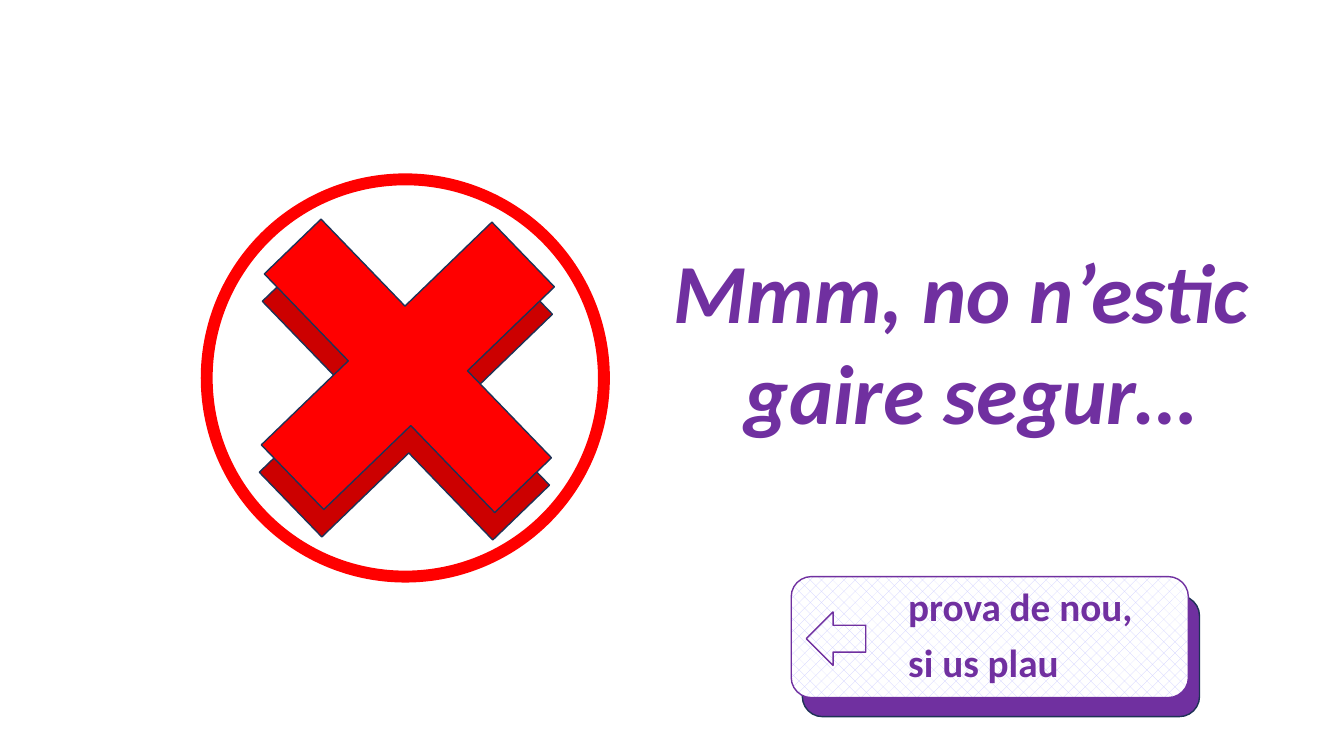
from dataclasses import dataclass

from pptx import Presentation
from pptx import util as u
from pptx.dml.color import RGBColor
from pptx.enum import dml, shapes, text


@dataclass(frozen=True)
class Theme:
    purple: RGBColor = RGBColor(0x70, 0x30, 0xA0)
    lavender: RGBColor = RGBColor(0xCC, 0xCC, 0xFF)
    white: RGBColor = RGBColor(0xFF, 0xFF, 0xFF)
    red: RGBColor = RGBColor(0xFF, 0x00, 0x00)
    dark_red: RGBColor = RGBColor(0xCC, 0x00, 0x00)
    navy: RGBColor = RGBColor(0x1E, 0x32, 0x56)
    font: str = "Calibri"
    message_size: int = 60
    button_size: int = 28


THEME = Theme()
KIND = shapes.MSO_SHAPE


def apply(target, formats):
    for name, value in formats.items():
        setattr(target, name, value)


def add_figure(page, kind, place, fill=None, line=THEME.navy, width=1):
    """Add a preset shape; place is left, top, width, height in centimetres."""
    shape = page.shapes.add_shape(kind, *map(u.Cm, place))
    shape.shadow.inherit = False
    if fill is None:
        shape.fill.background()
    else:
        shape.fill.solid()
        shape.fill.fore_color.rgb = fill
    shape.line.color.rgb = line
    shape.line.width = u.Pt(width)
    return shape


def add_cross(page, left, top, fill):
    cross = add_figure(page, KIND.CROSS, (left, top, 8.36, 8.08), fill)
    cross.adjustments[0] = 0.377
    cross.rotation = 46


def hatch(shape):
    shape.fill.patterned()
    shape.fill.pattern = dml.MSO_PATTERN.PERCENT_25
    shape.fill.fore_color.rgb = THEME.lavender
    shape.fill.back_color.rgb = THEME.white


def write_lines(frame, lines, size, align, italic=False, spacing=1.0, gap=0):
    """Write one paragraph per line, with gap points between them."""
    for index, line in enumerate(lines):
        para = frame.paragraphs[0] if index == 0 else frame.add_paragraph()
        apply(para, {"alignment": align, "line_spacing": spacing,
                     "space_before": u.Pt(gap if index else 0)})
        span = para.add_run()
        span.text = line
        apply(span.font, {"name": THEME.font, "size": u.Pt(size),
                          "bold": True, "italic": italic})
        span.font.color.rgb = THEME.purple


def add_message(page):
    box = page.shapes.add_textbox(*map(u.Cm, (16.64, 5.92, 15.16, 5.38)))
    box.text_frame.word_wrap = False
    write_lines(box.text_frame, ["Mmm, no n’estic", " gaire segur…"],
                THEME.message_size, text.PP_ALIGN.CENTER, italic=True)


def add_wrong_mark(page):
    add_figure(page, KIND.FLOWCHART_CONNECTOR, (5.21, 4.52, 10.01, 10.01),
               line=THEME.red, width=8.5)
    add_cross(page, 6.05, 5.87, THEME.dark_red)
    add_cross(page, 6.1, 5.18, THEME.red)


def add_retry_button(page):
    size = (10.01, 3.05)
    add_figure(page, KIND.ROUNDED_RECTANGLE, (20.22, 15.01, *size), THEME.purple)
    face = add_figure(page, KIND.ROUNDED_RECTANGLE, (19.94, 14.53, *size),
                      line=THEME.purple)
    hatch(face)
    apply(face.text_frame, {"word_wrap": True, "margin_left": u.Cm(2.8),
                            "vertical_anchor": text.MSO_ANCHOR.MIDDLE})
    write_lines(face.text_frame, ["prova de nou,", "si us plau"],
                THEME.button_size, text.PP_ALIGN.LEFT, spacing=0.9, gap=10)
    add_figure(page, KIND.LEFT_ARROW, (20.32, 15.42, 1.5, 1.35),
               line=THEME.purple)


def main():
    deck = Presentation()
    apply(deck, {"slide_width": u.Cm(33.87), "slide_height": u.Cm(19.05)})
    page = deck.slides.add_slide(deck.slide_layouts[6])
    add_message(page)
    add_wrong_mark(page)
    add_retry_button(page)
    deck.save("out.pptx")


if __name__ == "__main__":
    main()
